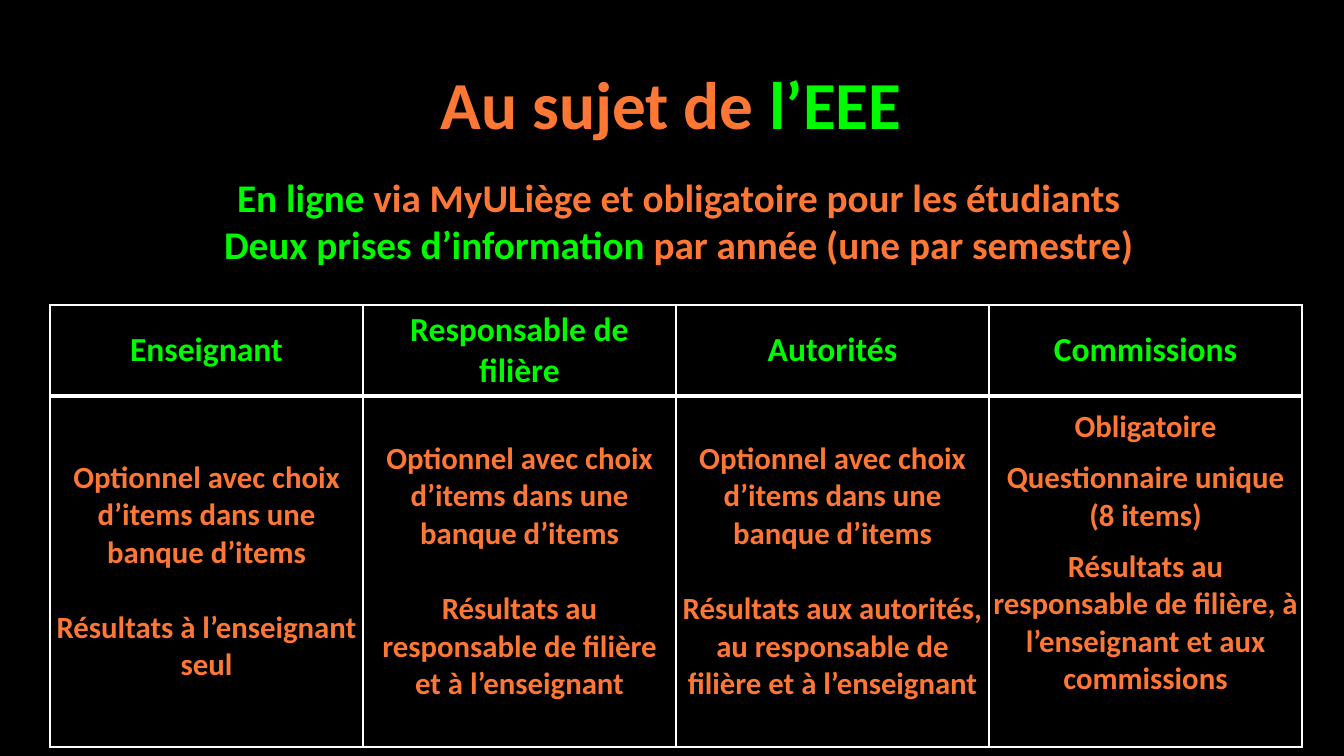
"""Builds the slide on the EEE surveys and who may request them."""
import pptx
import pptx.util
import pptx.dml.color
import pptx.enum.text
import pptx.oxml.ns
import lxml.etree

BLACK, WHITE, GREEN, ORANGE = "000000", "FFFFFF", "00FA00", "FE7735"
FONT = "Calibri"
PX = 914400 / 100.8

TITLE = [[("Au sujet de", ORANGE), (" l’EEE", GREEN)]]
SUBTITLE = [
    [("En ligne", GREEN), (" via MyULiège et obligatoire pour les étudiants", ORANGE)],
    [("Deux prises d’information ", GREEN), ("par année (une par semestre)", ORANGE)],
]
TEXT_BOXES = [
    (103, 57, 1136, 92, 48, TITLE),
    (53, 168, 1251, 105, 28, SUBTITLE),
]

OPTIONAL = "Optionnel avec choix d’items dans une banque d’items"
COLUMNS = [
    ("Enseignant", [(OPTIONAL, 0), ("Résultats à l’enseignant seul", 27)], 4),
    ("Responsable de filière",
     [(OPTIONAL, 0), ("Résultats au responsable de filière et à l’enseignant", 27)], 4),
    ("Autorités",
     [(OPTIONAL, 0),
      ("Résultats aux autorités, au responsable de filière et à l’enseignant", 27)], 4),
    ("Commissions",
     [("Obligatoire", 0), ("Questionnaire unique", 10), ("(8 items)", 0),
      ("Résultats au responsable de filière, à l’enseignant et aux commissions", 10)], 41),
]
TABLE_LEFT, TABLE_TOP, COLUMN_WIDTH = 50, 305, 313
ROW_HEIGHTS = [91, 351]
CELL_INSET = 4


def px(n):
    return pptx.util.Emu(round(n * PX))


def rgb(color):
    return pptx.dml.color.RGBColor.from_string(color)


def fill_text(tf, paragraphs, size):
    """Write centred paragraphs, each a list of runs and a space before."""
    tf.word_wrap = True
    for i, (runs, gap) in enumerate(paragraphs):
        p = tf.paragraphs[0] if i == 0 else tf.add_paragraph()
        p.alignment = pptx.enum.text.PP_ALIGN.CENTER
        if gap:
            p.space_before = pptx.util.Pt(gap)
        for text, color in runs:
            r = p.add_run()
            r.text = text
            r.font.name = FONT
            r.font.size = pptx.util.Pt(size)
            r.font.bold = True
            r.font.color.rgb = rgb(color)


def set_borders(cell, widths):
    """Draw the cell's left, right, top and bottom borders in white."""
    qn = pptx.oxml.ns.qn
    tc_pr = cell._tc.get_or_add_tcPr()
    for i, (side, width) in enumerate(zip("LRTB", widths)):
        ln = lxml.etree.Element(qn(f"a:ln{side}"), w=str(pptx.util.Pt(width)))
        fill = lxml.etree.SubElement(ln, qn("a:solidFill"))
        lxml.etree.SubElement(fill, qn("a:srgbClr"), val=WHITE)
        tc_pr.insert(i, ln)


def style_cell(cell, paragraphs, size, bottom, borders):
    cell.fill.solid()
    cell.fill.fore_color.rgb = rgb(BLACK)
    cell.vertical_anchor = pptx.enum.text.MSO_ANCHOR.MIDDLE
    cell.margin_left = cell.margin_right = cell.margin_top = px(CELL_INSET)
    cell.margin_bottom = px(bottom)
    fill_text(cell.text_frame, paragraphs, size)
    set_borders(cell, borders)


def add_table(slide):
    shape = slide.shapes.add_table(
        len(ROW_HEIGHTS), len(COLUMNS), px(TABLE_LEFT), px(TABLE_TOP),
        px(COLUMN_WIDTH * len(COLUMNS)), px(sum(ROW_HEIGHTS)))
    table = shape.table
    for row, height in zip(table.rows, ROW_HEIGHTS):
        row.height = px(height)
    for c, (heading, lines, bottom) in enumerate(COLUMNS):
        table.columns[c].width = px(COLUMN_WIDTH)
        style_cell(table.cell(0, c), [([(heading, GREEN)], 0)], 24, CELL_INSET, (1, 1, 1, 3))
        body = [([(text, ORANGE)], gap) for text, gap in lines]
        style_cell(table.cell(1, c), body, 22, bottom, (1, 1, 3, 1))


def main():
    prs = pptx.Presentation()
    prs.slide_width, prs.slide_height = px(1344), px(756)
    slide = prs.slides.add_slide(prs.slide_layouts[6])
    slide.background.fill.solid()
    slide.background.fill.fore_color.rgb = rgb(BLACK)
    add_table(slide)
    for left, top, width, height, size, lines in TEXT_BOXES:
        tb = slide.shapes.add_textbox(px(left), px(top), px(width), px(height))
        fill_text(tb.text_frame, [(runs, 0) for runs in lines], size)
    prs.save("out.pptx")


if __name__ == "__main__":
    main()
